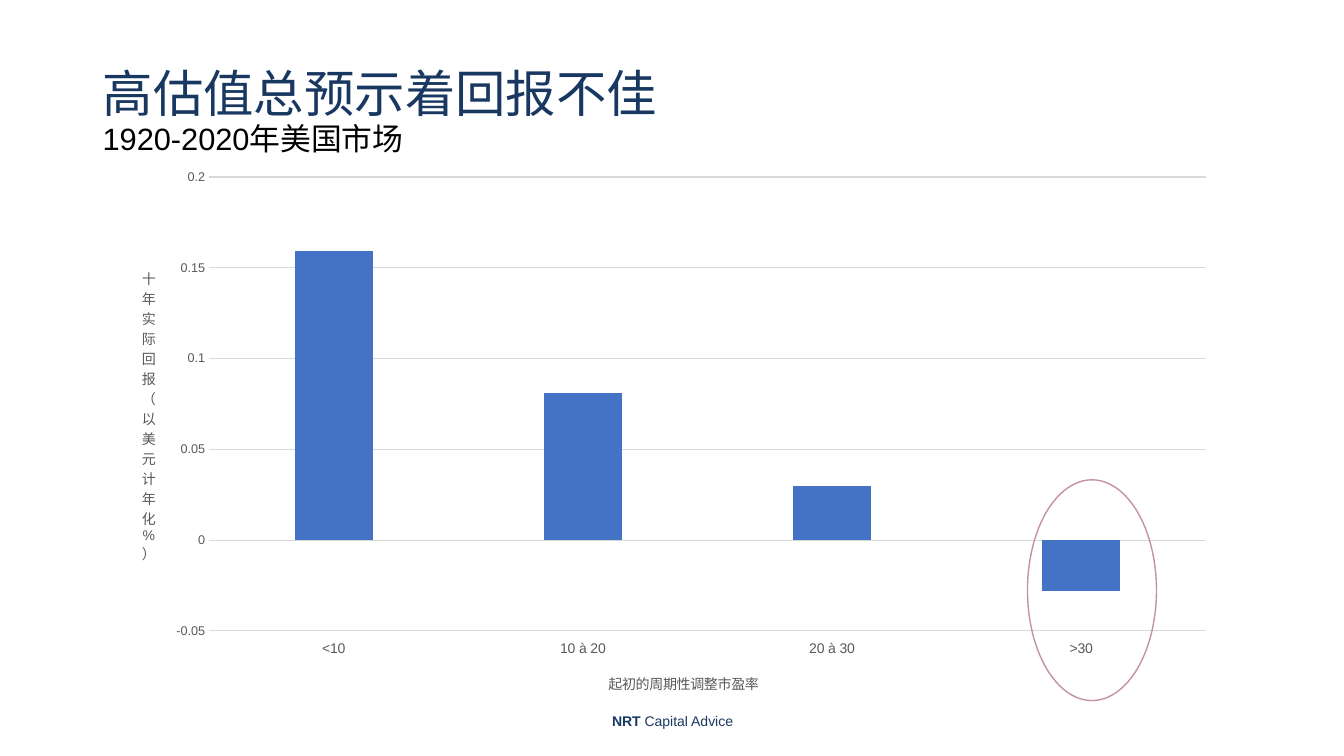
from dataclasses import dataclass

from pptx import Presentation
from pptx.chart.data import CategoryChartData
from pptx.dml.color import RGBColor
from pptx.enum.chart import XL_CHART_TYPE, XL_TICK_LABEL_POSITION, XL_TICK_MARK
from pptx.enum.shapes import MSO_SHAPE
from pptx.enum.text import MSO_ANCHOR, PP_ALIGN
from pptx.oxml import parse_xml
from pptx.oxml.ns import nsdecls, qn
from pptx.util import Inches, Pt


@dataclass(frozen=True)
class Theme:
    font: str = "Arial"
    navy: str = "193861"
    black: str = "000000"
    label: str = "595959"
    grid: str = "D9D9D9"
    bar: str = "4472C4"
    ring: str = "C490AA"
    title_size: float = 36
    subtitle_size: float = 22
    small_size: float = 10
    tick_size: float = 9


class SlideBuilder:
    def __init__(self, prs, theme):
        self.prs, self.theme = prs, theme
        self.s = prs.slides.add_slide(prs.slide_layouts[6])

    def box(self, x, y, w, h):
        """Turn shares of the slide's size into lengths."""
        W, H = self.prs.slide_width, self.prs.slide_height
        return [round(v) for v in (x * W, y * H, w * W, h * H)]

    def style(self, font, size, color, bold=False):
        font.name, font.size, font.bold = self.theme.font, Pt(size), bold
        font.color.rgb = RGBColor.from_string(color)

    def line(self, line, color, width):
        line.color.rgb = RGBColor.from_string(color)
        line.width = Pt(width)

    def text(self, area, lines, align=PP_ALIGN.LEFT, spacing=1.0):
        """Each line is a list of (text, size, color, bold) runs."""
        tf = self.s.shapes.add_textbox(*self.box(*area)).text_frame
        tf.word_wrap = True
        tf.vertical_anchor = MSO_ANCHOR.MIDDLE
        p = tf.paragraphs[0]
        p.alignment, p.line_spacing = align, spacing
        for i, runs in enumerate(lines):
            if i:
                p.add_line_break()
            for words, *look in runs:
                r = p.add_run()
                r.text = words
                self.style(r.font, *look)

    def ellipse(self, area, color):
        sp = self.s.shapes.add_shape(MSO_SHAPE.OVAL, *self.box(*area))
        sp.shadow.inherit = False
        sp.fill.background()
        self.line(sp.line, color, 1)

    def place(self, element, index, **shares):
        """Fix a chart part's position by shares of the chart's size."""
        for old in element.findall(qn("c:layout")):
            element.remove(old)
        target = '<c:layoutTarget val="inner"/>' if "w" in shares else ""
        modes = "".join(f'<c:{k}Mode val="edge"/>' for k in "xy")
        values = "".join(f'<c:{k} val="{v}"/>' for k, v in shares.items())
        element.insert(index, parse_xml(
            f'<c:layout {nsdecls("c")}><c:manualLayout>{target}{modes}{values}'
            "</c:manualLayout></c:layout>"))

    def axis(self, axis, title, size, x, y):
        t = self.theme
        axis.major_tick_mark = axis.minor_tick_mark = XL_TICK_MARK.NONE
        self.style(axis.tick_labels.font, size, t.label)
        tf = axis.axis_title.text_frame
        r = tf.paragraphs[0].add_run()
        r.text = title
        self.style(r.font, t.small_size, t.label)
        self.place(axis.axis_title._element, 1, x=x, y=y)
        return tf

    def column_chart(self, area, cats, vals, cat_title, val_title):
        t = self.theme
        data = CategoryChartData()
        data.categories = cats
        data.add_series("Series 1", vals)
        chart = self.s.shapes.add_chart(
            XL_CHART_TYPE.COLUMN_CLUSTERED, *self.box(*area), data).chart
        chart.has_legend = chart.has_title = False
        self.style(chart.font, t.small_size, t.black)
        plot = chart.plots[0]
        plot.vary_by_categories = False
        plot.gap_width, plot.overlap = 219, -27
        series = plot.series[0]
        series.invert_if_negative = False
        series.format.fill.solid()
        series.format.fill.fore_color.rgb = RGBColor.from_string(t.bar)

        cat, val = chart.category_axis, chart.value_axis
        self.axis(cat, cat_title, t.small_size, 0.44, 0.92)
        cat.tick_label_position = XL_TICK_LABEL_POSITION.LOW
        self.line(cat.format.line, t.grid, 0.75)
        tf = self.axis(val, val_title, t.tick_size, 0.02, 0.19)
        body = tf._txBody.find(qn("a:bodyPr"))
        body.set("rot", "0")
        body.set("vert", "wordArtVert")
        val.minimum_scale, val.maximum_scale, val.major_unit = -0.05, 0.2, 0.05
        val.tick_labels.number_format = "General"
        val.tick_labels.number_format_is_linked = False
        val.format.line.fill.background()
        self.line(val.major_gridlines.format.line, t.grid, 0.75)
        self.place(chart._chartSpace.chart.plotArea, 0,
                   x=0.083, y=0.032, w=0.897, h=0.819)


def main():
    prs = Presentation()
    prs.slide_width, prs.slide_height = Inches(13.33), Inches(7.5)
    t = Theme()
    b = SlideBuilder(prs, t)
    b.text((0.069, 0.053, 0.863, 0.193), [
        [("高估值总预示着回报不佳", t.title_size, t.navy)],
        [("1920-2020年美国市场", t.subtitle_size, t.black)],
    ], spacing=0.9)
    b.text((0.3316, 0.927, 0.3376, 0.053), [
        [("NRT", t.small_size, t.navy, True),
         (" Capital Advice", t.small_size, t.navy)],
    ], align=PP_ALIGN.CENTER)
    b.column_chart((0.087, 0.2107, 0.8267, 0.7333),
                   ["<10", "10 à 20", "20 à 30", ">30"],
                   [0.159, 0.081, 0.03, -0.028],
                   "起初的周期性调整市盈率", "十年实际回报（以美元计年化%）")
    b.ellipse((0.7645, 0.6347, 0.096, 0.292), t.ring)
    prs.save("out.pptx")


if __name__ == "__main__":
    main()
